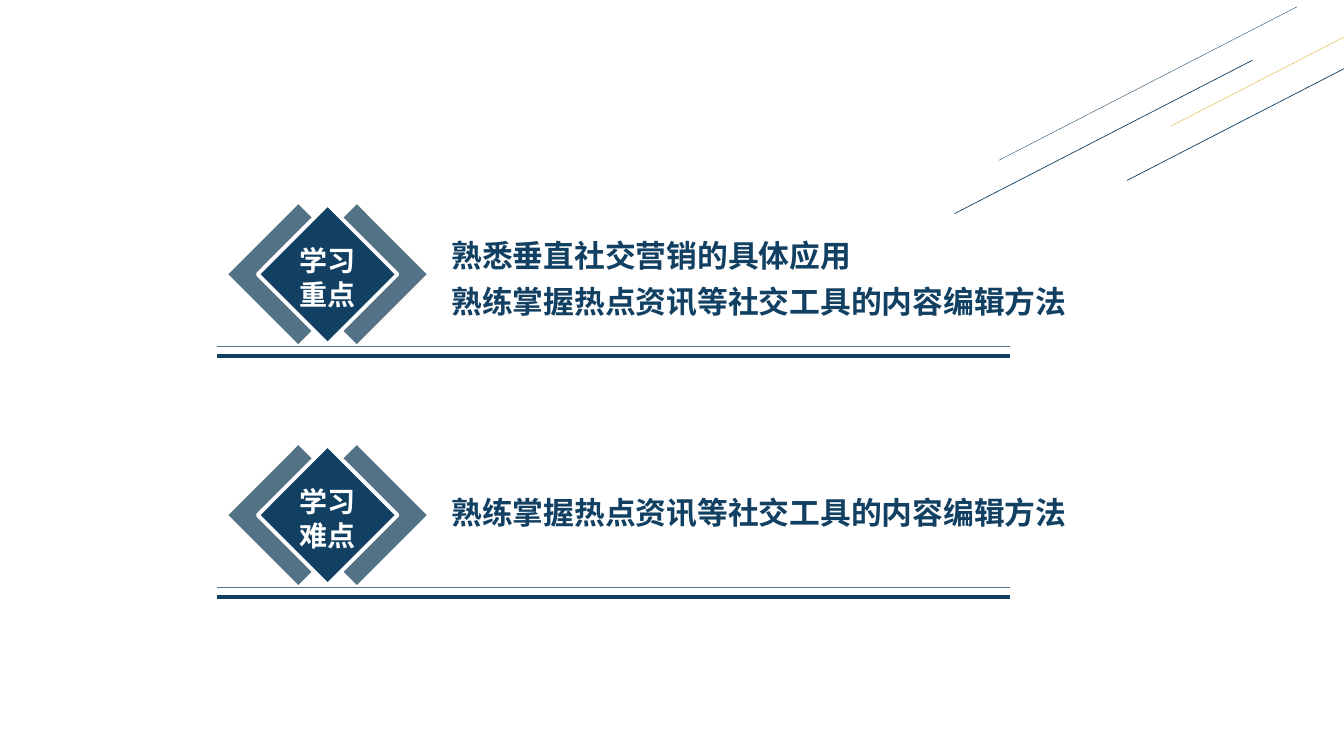
from pptx import Presentation
from pptx import util as u
from pptx.dml.color import RGBColor
from pptx.enum import shapes, text
from pptx.oxml.ns import qn
from lxml import etree

NAVY = RGBColor(0x12, 0x40, 0x62)
SLATE = RGBColor(0x53, 0x72, 0x85)
GOLD = RGBColor(0xDC, 0xAA, 0x1F)
WHITE = RGBColor(0xFF, 0xFF, 0xFF)
FONT = "Noto Sans CJK SC"

# Layout in points
DIAMOND_LEFT, DIAMOND_SIZE, DIAMOND_SHIFT = 198.7, 70.6, 20.9
RULE_LEFT, RULE_RIGHT = 154.8, 721.4
SLANT = (212.9, -109.6)

# Start, colour and width of each slanted line
SLANTED_LINES = [
    ((681.8, 152.6), NAVY, 0.5),
    ((713.5, 114.5), NAVY, 0.25),
    ((805, 128.9), NAVY, 0.5),
    ((836.6, 90), GOLD, 0.25),
]

# Row top, badge lines, goal lines, goal text top and height
ROWS = [
    (160.6, ["学习", "重点"],
     ["熟悉垂直社交营销的具体应用", "熟练掌握热点资讯等社交工具的内容编辑方法"], 159.1, 73.4),
    (332.6, ["学习", "难点"],
     ["熟练掌握热点资讯等社交工具的内容编辑方法"], 342.7, 40.3),
]


def add_line(parts, start, end, color, width):
    line = parts.add_connector(shapes.MSO_CONNECTOR.STRAIGHT,
                               *(u.Pt(value) for value in (*start, *end)))
    line.line.color.rgb = color
    line.line.width = u.Pt(width)
    etree.SubElement(line._element.spPr, qn("a:effectLst"))


def add_diamond(parts, left, top, color, outline=None):
    diamond = parts.add_shape(shapes.MSO_SHAPE.ROUNDED_RECTANGLE, u.Pt(left), u.Pt(top),
                              u.Pt(DIAMOND_SIZE), u.Pt(DIAMOND_SIZE))
    diamond.adjustments[0] = 0
    diamond.rotation = 45
    diamond.shadow.inherit = False
    diamond.fill.solid()
    diamond.fill.fore_color.rgb = color
    if outline is None:
        diamond.line.fill.background()
    else:
        diamond.line.color.rgb = outline
        diamond.line.width = u.Pt(2.75)


def add_text(parts, lines, left, top, width, height, *, size, color, spacing=None):
    box = parts.add_textbox(u.Pt(left), u.Pt(top), u.Pt(width), u.Pt(height))
    frame = box.text_frame
    frame.word_wrap = False
    frame.auto_size = text.MSO_AUTO_SIZE.SHAPE_TO_FIT_TEXT
    for index, words in enumerate(lines):
        para = frame.paragraphs[0] if index == 0 else frame.add_paragraph()
        if spacing:
            para.line_spacing = spacing
        span = para.add_run()
        span.text = words
        span.font.size = u.Pt(size)
        span.font.bold = True
        span.font.color.rgb = color
        span.font.name = FONT
        east_asian = etree.SubElement(span.font._element, qn("a:ea"))
        east_asian.set("typeface", FONT)


def add_row(page, top, badge, goals, goals_top, goals_height):
    # Thin rule and side diamonds
    thin, thick = top + 87.1, top + 93.6
    add_line(page.shapes, (RULE_RIGHT, thin), (RULE_LEFT, thin), SLATE, 1)
    for shift in (DIAMOND_SHIFT, -DIAMOND_SHIFT):
        add_diamond(page.shapes, DIAMOND_LEFT + shift, top, SLATE)

    # Badge
    group = page.shapes.add_group_shape()
    add_diamond(group.shapes, DIAMOND_LEFT, top, NAVY, outline=WHITE)
    add_text(group.shapes, badge, 206.6, top + 10.1, 54.7, 55.4, size=20, color=WHITE)

    # Thick rule and goals
    add_line(page.shapes, (RULE_RIGHT, thick), (RULE_LEFT, thick), NAVY, 3)
    add_text(page.shapes, goals, 315.4, goals_top, 454.3, goals_height,
             size=22, color=NAVY, spacing=1.25)


def main():
    deck = Presentation()
    deck.slide_width, deck.slide_height = u.Pt(960), u.Pt(540)
    page = deck.slides.add_slide(deck.slide_layouts[6])

    # Slanted lines in the corner
    for (x, y), color, width in SLANTED_LINES:
        add_line(page.shapes, (x, y), (x + SLANT[0], y + SLANT[1]), color, width)

    # Key points and difficult points
    for row in ROWS:
        add_row(page, *row)

    deck.save("out.pptx")


if __name__ == "__main__":
    main()
